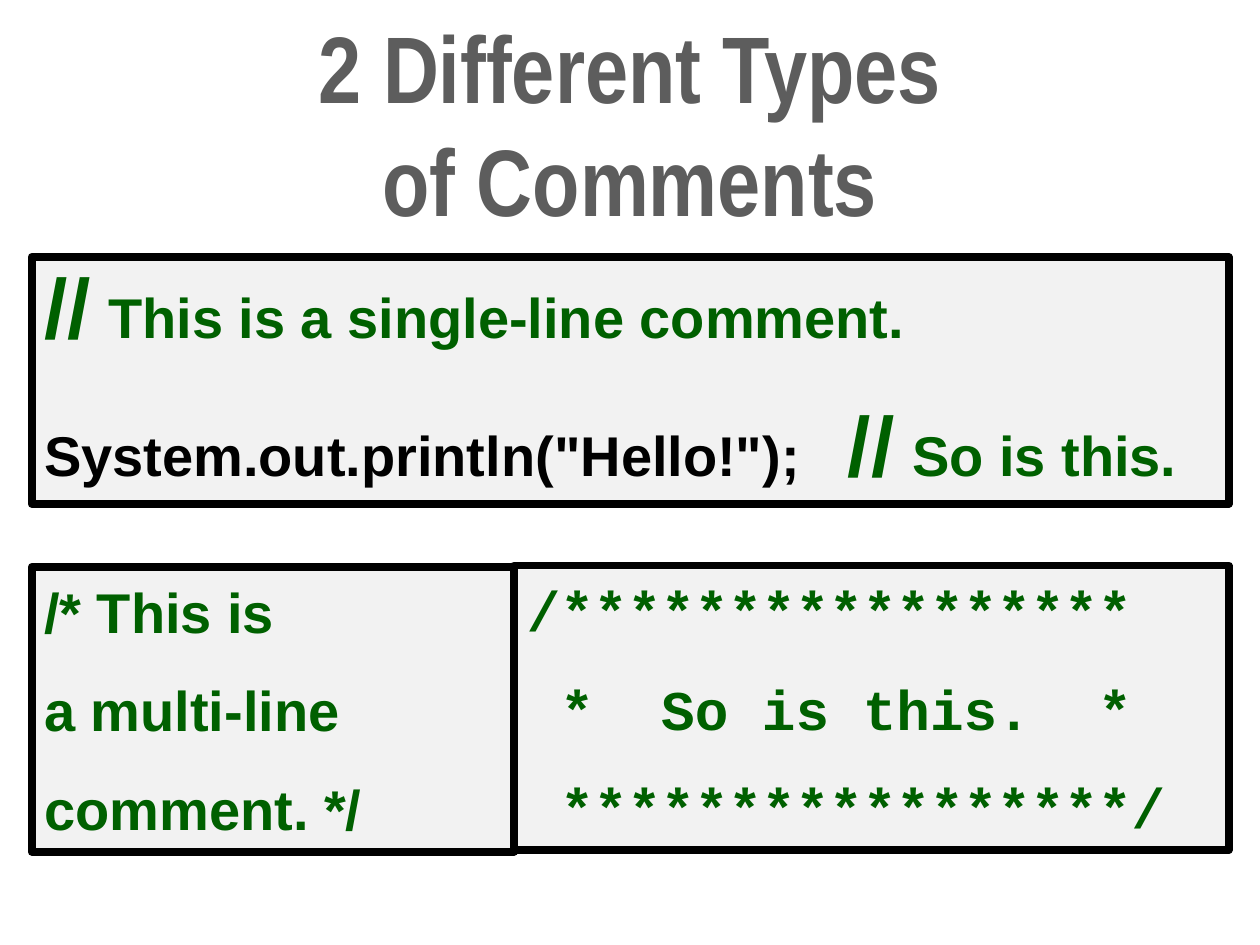
from pptx import Presentation
from pptx.dml.color import RGBColor
from pptx.enum.shapes import MSO_SHAPE
from pptx.enum.text import MSO_ANCHOR, PP_ALIGN
from pptx.util import Cm, Pt

RECT = MSO_SHAPE.RECTANGLE
MIDDLE = MSO_ANCHOR.MIDDLE
LEFT, CENTER = PP_ALIGN.LEFT, PP_ALIGN.CENTER
COLORS = {"title": "5D5D5D", "panel": "F2F2F2", "code": "000000", "comment": "006000"}


def rgb(name):
    return RGBColor.from_string(COLORS[name])


def add_run(p, text, size, font, color):
    r = p.add_run()
    r.text = text
    r.font.size = Pt(size)
    r.font.name = font
    r.font.bold = True
    r.font.color.rgb = rgb(color)


prs = Presentation()
prs.slide_width, prs.slide_height = Cm(25.4), Cm(19.05)
s = prs.slides.add_slide(prs.slide_layouts[6])

# Title
tf = s.shapes.add_textbox(Cm(0), Cm(0), Cm(25.4), Cm(4.93)).text_frame
tf.word_wrap = True
tf.vertical_anchor = MIDDLE
p = tf.paragraphs[0]
p.alignment = CENTER
add_run(p, "2 Different Types", 54, "Arial Narrow", "title")
p.add_line_break()
add_run(p, "of Comments", 54, "Arial Narrow", "title")

# Code panels: place, font, line spacing, space before, lines of (text, size, color)
slashes = [("//", 48, "comment"), (" ", 36, "comment")]
single_line = [
    slashes + [("This is a single-line comment.", 32, "comment")],
    [('System.out.println("Hello!");   ', 32, "code")]
    + slashes + [("So is this.", 32, "comment")],
]
multi_line = [[(text, 32, "comment")] for text in
              ("/* This is", "a multi-line", "comment. */")]
stars = "*" * 17
boxed = [[(text, 32, "comment")] for text in
         ("/" + stars, " *  So is this.  *", " " + stars + "/")]
panels = [
    ((0.64, 5.18, 24.13, 4.98), "Arial", 0.9, 27, single_line),
    ((0.64, 11.43, 9.73, 5.74), "Arial", 1.0, 18, multi_line),
    ((10.37, 11.4, 14.4, 5.74), "Courier New", 1.0, 18, boxed),
]

for place, font, spacing, gap, lines in panels:
    sp = s.shapes.add_shape(RECT, *[Cm(v) for v in place])
    sp.shadow.inherit = False
    sp.fill.solid()
    sp.fill.fore_color.rgb = rgb("panel")
    sp.line.color.rgb = rgb("code")
    sp.line.width = Pt(4.5)
    tf = sp.text_frame
    tf.word_wrap = True
    tf.vertical_anchor = MIDDLE
    for i, line in enumerate(lines):
        p = tf.add_paragraph() if i else tf.paragraphs[0]
        p.alignment = LEFT
        p.line_spacing = spacing
        p.space_before = Pt(gap if i else 0)
        for text, size, color in line:
            add_run(p, text, size, font, color)

prs.save("out.pptx")
